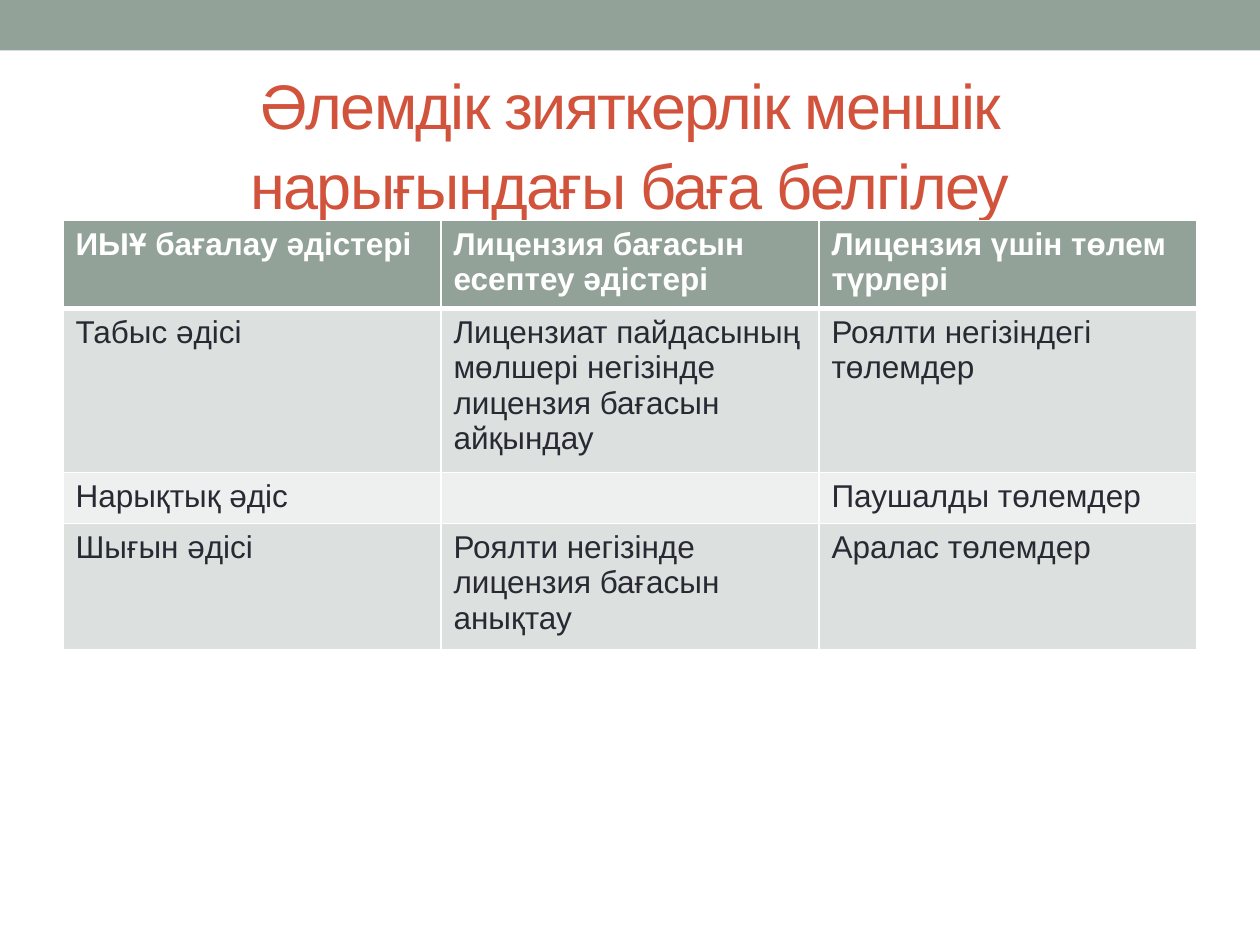
"""Build a slide with a table of valuation methods, licence pricing and payments."""
import lxml.etree
import pptx
import pptx.dml.color
import pptx.enum.shapes
import pptx.enum.text
import pptx.oxml.ns
import pptx.util

Pt = pptx.util.Pt
qn = pptx.oxml.ns.qn
COLORS = {"sage": "93A299", "title": "D2533C", "ink": "292934",
          "white": "FFFFFF", "odd": "DCE0DE", "even": "EEF0EF"}


def rgb(name):
    return pptx.dml.color.RGBColor.from_string(COLORS[name])


def write(frame, text, size=18, color="ink", bold=False, align=None, spacing=None, tracking=None):
    frame.word_wrap = True
    paragraph = frame.paragraphs[0]
    paragraph.alignment = align
    paragraph.line_spacing = spacing
    run = paragraph.add_run()
    run.text = text
    run.font.name = "Arial"
    run.font.size = Pt(size)
    run.font.bold = bold
    run.font.color.rgb = rgb(color)
    if tracking is not None:
        run.font._element.set("spc", str(tracking * 100))


deck = pptx.Presentation()
deck.slide_width, deck.slide_height = Pt(720), Pt(540)
slide = deck.slides.add_slide(deck.slide_layouts[6])

top_band = slide.shapes.add_shape(
    pptx.enum.shapes.MSO_SHAPE.RECTANGLE, 0, 0, Pt(720), Pt(28.8))
top_band.shadow.inherit = False
top_band.fill.solid()
top_band.fill.fore_color.rgb = rgb("sage")
top_band.line.fill.background()

title = slide.shapes.add_textbox(Pt(36), Pt(42), Pt(648), Pt(78)).text_frame
title.vertical_anchor = pptx.enum.text.MSO_ANCHOR.MIDDLE
write(title, "Әлемдік зияткерлік меншік нарығындағы баға белгілеу", size=36, color="title",
      align=pptx.enum.text.PP_ALIGN.CENTER, spacing=1.07, tracking=-1)

methods = [
    ["ИЫҰ бағалау әдістері", "Лицензия бағасын есептеу әдістері", "Лицензия үшін төлем түрлері"],
    ["Табыс әдісі", "Лицензиат пайдасының мөлшері негізінде лицензия бағасын айқындау",
     "Роялти негізіндегі төлемдер"],
    ["Нарықтық әдіс", "", "Паушалды төлемдер"],
    ["Шығын әдісі", "Роялти негізінде лицензия бағасын анықтау", "Аралас төлемдер"],
]
row_heights = [47.5, 88, 29.2, 67.5]
methods_table = slide.shapes.add_table(
    4, 3, Pt(36), Pt(126), Pt(648), Pt(sum(row_heights))).table
for column in methods_table.columns:
    column.width = Pt(216)

for row, (entries, height) in enumerate(zip(methods, row_heights)):
    methods_table.rows[row].height = Pt(height)
    heading = row == 0
    shade = "sage" if heading else "odd" if row % 2 else "even"
    for col, entry in enumerate(entries):
        cell = methods_table.cell(row, col)
        write(cell.text_frame, entry, color="white" if heading else "ink", bold=heading)
        properties = cell._tc.get_or_add_tcPr()
        for side in ("lnL", "lnR", "lnT", "lnB"):
            thick = (row, side) in ((0, "lnB"), (1, "lnT"))
            border = lxml.etree.SubElement(
                properties, qn(f"a:{side}"), w=str(Pt(3 if thick else 1)))
            stroke = lxml.etree.SubElement(border, qn("a:solidFill"))
            lxml.etree.SubElement(stroke, qn("a:srgbClr"), val=COLORS["white"])
        cell.fill.solid()
        cell.fill.fore_color.rgb = rgb(shade)

deck.save("out.pptx")
